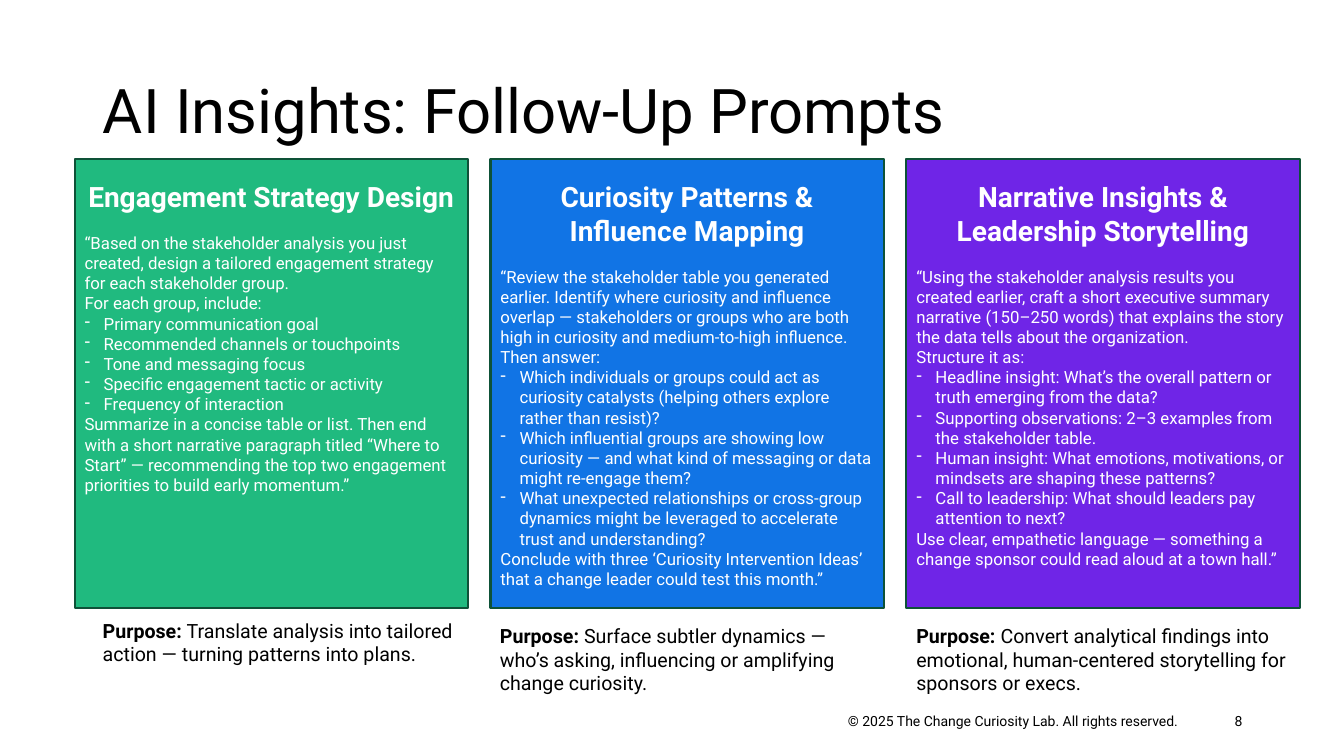
from lxml.etree import SubElement
from pptx import Presentation
from pptx.dml.color import RGBColor
from pptx.enum.shapes import MSO_SHAPE as Shape
from pptx.enum.text import MSO_ANCHOR as Anchor, MSO_AUTO_SIZE as AutoSize, PP_ALIGN as Align
from pptx.oxml.ns import qn
from pptx.util import Inches, Pt

FONT = "Roboto"
HEADING_GAP = 14
COLUMN_LEFT, COLUMN_PITCH, COLUMN_WIDTH = 0.74, 4.125, 3.9
CARD_TOP, CARD_HEIGHT = 1.58, 4.45
HANGING = Inches(0.19)


def color(target, value):
    target.rgb = RGBColor.from_string(value)


def write(frame, text, size=12, ink="000000", bold=False, align=Align.LEFT,
          lead="", dash=False, before=0, spacing=None):
    frame.word_wrap = True
    paragraph = frame.paragraphs[0] if not frame.text else frame.add_paragraph()
    if dash:
        properties = paragraph._p.get_or_add_pPr()
        properties.set("marL", str(HANGING))
        properties.set("indent", str(-HANGING))
        SubElement(properties, qn("a:buChar")).set("char", "-")
    paragraph.alignment = align
    if before:
        paragraph.space_before = Pt(before)
    if spacing:
        paragraph.line_spacing = spacing
    for words, heavy in ((lead, True), (text, bold)):
        if words:
            run = paragraph.add_run()
            run.text = words
            run.font.name, run.font.size, run.font.bold = FONT, Pt(size), heavy
            color(run.font.color, ink)


prompts = [
    ("Engagement Strategy Design", "20BA7F",
     ["“Based on the stakeholder analysis you just created, design a tailored engagement strategy "
      "for each stakeholder group.",
      "For each group, include:"],
     ["Primary communication goal",
      "Recommended channels or touchpoints",
      "Tone and messaging focus",
      "Specific engagement tactic or activity",
      "Frequency of interaction"],
     "Summarize in a concise table or list. Then end with a short narrative paragraph titled "
     "“Where to Start” — recommending the top two engagement priorities to build early momentum.”",
     " Translate analysis into tailored action — turning patterns into plans.",
     (0.92, 6.09, 3.72, 0.57)),
    ("Curiosity Patterns & Influence Mapping", "1174E5",
     ["“Review the stakeholder table you generated earlier. Identify where curiosity and influence "
      "overlap — stakeholders or groups who are both high in curiosity and medium-to-high "
      "influence. Then answer:"],
     ["Which individuals or groups could act as curiosity catalysts (helping others explore "
      "rather than resist)?",
      "Which influential groups are showing low curiosity — and what kind of messaging or data "
      "might re-engage them?",
      "What unexpected relationships or cross-group dynamics might be leveraged to accelerate "
      "trust and understanding?"],
     "Conclude with three ‘Curiosity Intervention Ideas’ that a change leader could test this month.”",
     " Surface subtler dynamics — who’s asking, influencing or amplifying change curiosity.",
     (4.86, 6.14, 3.9, 0.81)),
    ("Narrative Insights & Leadership Storytelling", "6F25E7",
     ["“Using the stakeholder analysis results you created earlier, craft a short executive summary "
      "narrative (150–250 words) that explains the story the data tells about the organization.",
      "Structure it as:"],
     ["Headline insight: What’s the overall pattern or truth emerging from the data?",
      "Supporting observations: 2–3 examples from the stakeholder table.",
      "Human insight: What emotions, motivations, or mindsets are shaping these patterns?",
      "Call to leadership: What should leaders pay attention to next?"],
     "Use clear, empathetic language — something a change sponsor could read aloud at a town hall.”",
     " Convert analytical findings into emotional, human-centered storytelling for sponsors or execs.",
     (8.99, 6.14, 3.9, 0.81)),
]

deck = Presentation()
deck.slide_width, deck.slide_height = Inches(13.33), Inches(7.5)
slide = deck.slides.add_slide(deck.slide_layouts[5])

title = slide.shapes.title
title.left, title.top, title.width, title.height = map(Inches, (0.92, 0.4, 11.5, 1.45))
title.text_frame.vertical_anchor = Anchor.MIDDLE
title.text_frame.auto_size = AutoSize.NONE
write(title.text_frame, "AI Insights: Follow-Up Prompts", size=44, spacing=0.9)

for column, (heading, fill, opening, points, closing, purpose, purpose_box) in enumerate(prompts):
    left = COLUMN_LEFT + column * COLUMN_PITCH
    card = slide.shapes.add_shape(
        Shape.RECTANGLE, *map(Inches, (left, CARD_TOP, COLUMN_WIDTH, CARD_HEIGHT)))
    card.shadow.inherit = False
    card.fill.solid()
    color(card.fill.fore_color, fill)
    color(card.line.color, "0E5238")
    card.line.width = Pt(1.5)
    body = card.text_frame
    body.vertical_anchor = Anchor.TOP
    body.margin_top = Inches(0.2)
    write(body, heading, size=20, ink="FFFFFF", bold=True, align=Align.CENTER)
    for row, line in enumerate(opening):
        write(body, line, ink="FFFFFF", before=0 if row else HEADING_GAP)
    for point in points:
        write(body, point, ink="FFFFFF", dash=True)
    write(body, closing, ink="FFFFFF")

    note = slide.shapes.add_textbox(*map(Inches, purpose_box)).text_frame
    write(note, purpose, size=14, lead="Purpose:")

for words, box, anchor in (
    ("© 2025 The Change Curiosity Lab. All rights reserved.", (7.89, 7.02, 3.89, 0.27), Anchor.TOP),
    ("8", (11.79, 6.95, 0.63, 0.4), Anchor.MIDDLE),
):
    footer = slide.shapes.add_textbox(*map(Inches, box)).text_frame
    footer.vertical_anchor = anchor
    write(footer, words, size=10, align=Align.RIGHT)

deck.save("out.pptx")
